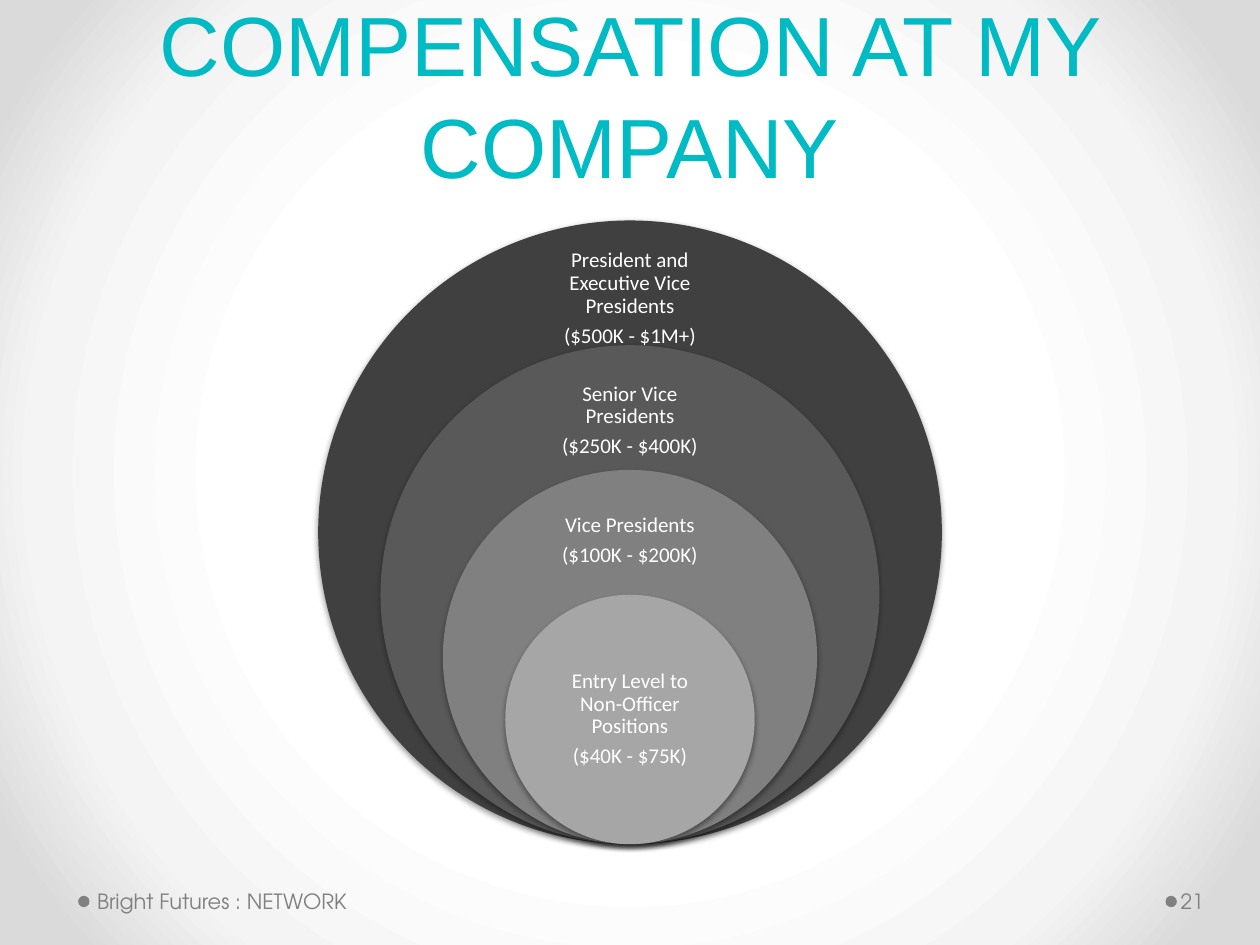
from pptx import Presentation
from pptx.dml.color import RGBColor
from pptx.enum.shapes import MSO_SHAPE
from pptx.enum.text import MSO_ANCHOR, MSO_AUTO_SIZE, PP_ALIGN
from pptx.oxml import parse_xml
from pptx.oxml.ns import nsdecls, qn
from pptx.util import Inches, Pt

OVAL = MSO_SHAPE.OVAL
MIDDLE, BOTTOM = MSO_ANCHOR.MIDDLE, MSO_ANCHOR.BOTTOM
LEFT, CENTER = PP_ALIGN.LEFT, PP_ALIGN.CENTER
NO_AUTOFIT = MSO_AUTO_SIZE.NONE

TEAL = RGBColor(0x00, 0xBA, 0xC4)
WHITE = RGBColor(0xFF, 0xFF, 0xFF)
GRAY = RGBColor(0x80, 0x80, 0x80)
CHARCOAL = RGBColor(0x40, 0x40, 0x40)
DARK_GRAY = RGBColor(0x59, 0x59, 0x59)
LIGHT_GRAY = RGBColor(0xA6, 0xA6, 0xA6)

BACKGROUND_GRADIENT = f"""
<a:gradFill {nsdecls("a")} rotWithShape="1">
  <a:gsLst>
    <a:gs pos="50000"><a:srgbClr val="FFFFFF"/></a:gs>
    <a:gs pos="76000"><a:srgbClr val="F4F4F4"/></a:gs>
    <a:gs pos="92000"><a:srgbClr val="DADADA"/></a:gs>
  </a:gsLst>
  <a:path path="circle">
    <a:fillToRect l="50000" t="50000" r="50000" b="50000"/>
  </a:path>
</a:gradFill>"""
CIRCLE_SHADOW = f"""
<a:outerShdw {nsdecls("a")} blurRad="{Pt(3.1)}" dist="{Pt(1.6)}" dir="5400000" rotWithShape="0">
  <a:srgbClr val="000000"><a:alpha val="38000"/></a:srgbClr>
</a:outerShdw>"""


def write_text(shape, lines, *, font, size, color, align=LEFT, anchor=MIDDLE,
               margins=(0, 0, 0, 0), line_spacing=None, space_after=None):
    """Fill a shape with one paragraph per line; margins are left, top, right, bottom inches."""
    frame = shape.text_frame
    frame.word_wrap = True
    frame.auto_size = NO_AUTOFIT
    frame.vertical_anchor = anchor
    frame.margin_left, frame.margin_top, frame.margin_right, frame.margin_bottom = map(Inches, margins)
    frame.text = "\n".join(lines)
    for paragraph in frame.paragraphs:
        paragraph.alignment = align
        paragraph.line_spacing = line_spacing
        paragraph.space_after = space_after
        paragraph.font.name = font
        paragraph.font.size = Pt(size)
        paragraph.font.color.rgb = color


def add_circle(left, top, diameter, color):
    circle = slide.shapes.add_shape(OVAL, Inches(left), Inches(top), Inches(diameter), Inches(diameter))
    circle.fill.solid()
    circle.fill.fore_color.rgb = color
    circle.line.fill.background()
    circle.shadow.inherit = False
    return circle


presentation = Presentation()
presentation.slide_width, presentation.slide_height = Inches(10), Inches(7.5)
slide = presentation.slides.add_slide(presentation.slide_layouts[5])

# Background
slide.background.fill.gradient()
default_gradient = next(slide.background._cSld.iter(qn("a:gradFill")))
default_gradient.getparent().replace(default_gradient, parse_xml(BACKGROUND_GRADIENT))

# Title
title = slide.shapes.title
title.left, title.top, title.width, title.height = Inches(0.5), Inches(0.15), Inches(9), Inches(1.45)
write_text(title, ["COMPENSATION AT MY COMPANY"], font="Arial", size=48, color=TEAL, align=CENTER,
           anchor=BOTTOM, margins=(0.1, 0.05, 0.1, 0.05), line_spacing=Pt(58))

# Nested circles sharing their lowest point: color, center of the label, label
levels = [
    (CHARCOAL, 2.37, ["President and Executive Vice Presidents", "($500K - $1M+)"]),
    (DARK_GRAY, 3.34, ["Senior Vice Presidents", "($250K - $400K)"]),
    (GRAY, 4.29, ["Vice Presidents", "($100K - $200K)"]),
    (LIGHT_GRAY, 5.71, ["Entry Level to Non-Officer Positions", "($40K - $75K)"]),
]
center_x, circles_bottom, diameter_step = 5, 6.7, 0.99
label_width, label_height = 1.2, 0.9
for index, (color, label_center, lines) in enumerate(levels):
    diameter = diameter_step * (5 - index)
    circle = add_circle(center_x - diameter / 2, circles_bottom - diameter, diameter, color)
    circle._element.spPr.find(qn("a:effectLst")).append(parse_xml(CIRCLE_SHADOW))
    label = slide.shapes.add_textbox(Inches(center_x - label_width / 2), Inches(label_center - label_height / 2),
                                     Inches(label_width), Inches(label_height))
    write_text(label, lines, font="Calibri", size=12, color=WHITE, align=CENTER,
               line_spacing=0.9, space_after=Pt(4.2))

# Footer: dot left, text left, text width, text, left margin
footers = [
    (0.62, 0.72, 3.11, "Bright Futures : NETWORK", 0.05),
    (9.25, 9.34, 0.61, "21", 0.03),
]
for dot_left, text_left, width, text, left_margin in footers:
    add_circle(dot_left, 7.11, 0.09, GRAY)
    footer = slide.shapes.add_textbox(Inches(text_left), Inches(6.95), Inches(width), Inches(0.4))
    write_text(footer, [text], font="TeX Gyre Adventor", size=12, color=GRAY,
               margins=(left_margin, 0.05, 0.05, 0.05))

presentation.save("out.pptx")
